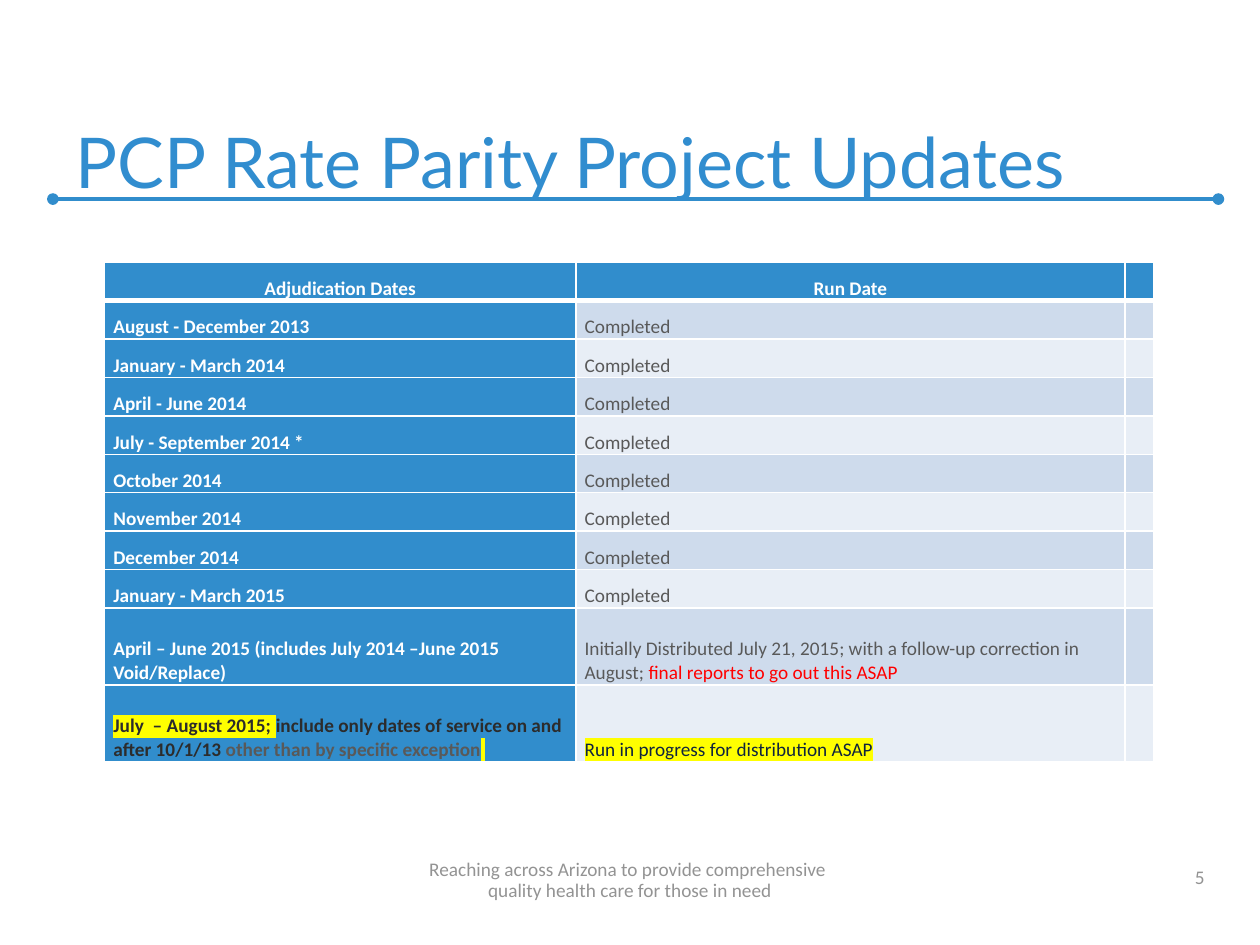
from typing import NamedTuple, Optional

from lxml.etree import SubElement
from pptx import Presentation
from pptx.dml.color import RGBColor
from pptx.enum.shapes import MSO_CONNECTOR as Connector
from pptx.enum.text import MSO_ANCHOR as Anchor, PP_ALIGN as Align
from pptx.oxml import parse_xml
from pptx.oxml.ns import nsdecls, qn
from pptx.util import Inches, Pt

COLORS = {
    "title": "318DCF",
    "accent": "318DCC",
    "band_dark": "CEDBEC",
    "band_light": "E8EEF6",
    "white": "FFFFFF",
    "gray": "595959",
    "footer": "939393",
    "ink": "2C2C2C",
    "navy": "0F243E",
    "red": "FF0000",
    "highlight": "FFFF00",
}
COLUMN_WIDTHS = (3.74, 4.36, 0.23)
ROW_UNIT = 3.97 / 13


class Piece(NamedTuple):
    text: str
    color: str = "gray"
    bold: bool = False
    highlighted: bool = False


class Label(NamedTuple):
    text: str
    left: float
    top: float
    width: float
    height: float
    size: int
    color: str
    font: str = "Calibri"
    align: Optional[Align] = None
    spacing: Optional[int] = None


class Period(NamedTuple):
    dates: list[Piece]
    status: list[Piece]
    units: int = 1


LABELS = [
    Label("PCP Rate Parity Project Updates", 0.5, 0.33, 9, 1.33, 40, "title", "Lato"),
    Label("5", 7.33, 6.78, 2.33, 0.32, 11, "footer", align=Align.RIGHT),
    Label(
        "Reaching across Arizona to provide comprehensive \nquality health care for those in need",
        0, 6.78, 10, 0.42, 11, "footer", align=Align.CENTER, spacing=12,
    ),
]
COMPLETED_DATES = [
    "August - December 2013",
    "January - March 2014",
    "April - June 2014",
    "July - September 2014 *",
    "October 2014",
    "November 2014",
    "December 2014",
    "January - March 2015",
]
PERIODS = [
    Period([Piece(dates, "white", True)], [Piece("Completed")]) for dates in COMPLETED_DATES
] + [
    Period(
        [Piece("April – June 2015 (includes July 2014 –June 2015 Void/Replace)", "white", True)],
        [
            Piece("Initially Distributed July 21, 2015; with a follow-up correction in August; "),
            Piece("final reports to go out this ASAP", "red"),
        ],
        2,
    ),
    Period(
        [
            Piece("July  – August 2015; ", "ink", True, True),
            Piece("include only dates of service on and after 10/1/13 ", "ink", True),
            Piece("other than by specific exception", "gray", True),
            Piece(" ", "navy", True, True),
        ],
        [Piece("Run in progress for distribution ASAP", "navy", highlighted=True)],
        2,
    ),
]


def rgb(color: str) -> RGBColor:
    """Look up a named colour."""
    return RGBColor.from_string(COLORS[color])


def style_run(run, size: int, color: str, font: str = "Calibri", bold: bool = False) -> None:
    """Set the font of a run."""
    run.font.size = Pt(size)
    run.font.name = font
    run.font.bold = bold
    run.font.color.rgb = rgb(color)


def draw_label(slide, label: Label) -> None:
    """Draw a bottom-anchored text box."""
    box = slide.shapes.add_textbox(
        Inches(label.left), Inches(label.top), Inches(label.width), Inches(label.height)
    )
    frame = box.text_frame
    frame.word_wrap = True
    frame.vertical_anchor = Anchor.BOTTOM
    paragraph = frame.paragraphs[0]
    paragraph.text = label.text
    paragraph.alignment = label.align
    if label.spacing:
        paragraph.line_spacing = Pt(label.spacing)
    for run in paragraph.runs:
        style_run(run, label.size, label.color, label.font)


def draw_title_rule(slide) -> None:
    """Draw the line under the title with a dot at each end."""
    rule = slide.shapes.add_connector(
        Connector.STRAIGHT, Inches(0.42), Inches(1.58), Inches(9.67), Inches(1.58)
    )
    rule.line.color.rgb = rgb("accent")
    rule.line.width = Pt(2.25)
    line = rule.line._get_or_add_ln()
    for end in ("a:headEnd", "a:tailEnd"):
        SubElement(line, qn(end), type="oval")
    SubElement(rule._element.spPr, qn("a:effectLst"))


def set_borders(cell, top: int, bottom: int) -> None:
    """Give a cell white borders, with the top and bottom widths in points."""
    properties = cell._tc.get_or_add_tcPr()
    widths = {"lnL": 1, "lnR": 1, "lnT": top, "lnB": bottom}
    for index, (side, width) in enumerate(widths.items()):
        border = parse_xml(
            f'<a:{side} {nsdecls("a")} w="{Pt(width)}"><a:solidFill>'
            f'<a:srgbClr val="{COLORS["white"]}"/></a:solidFill></a:{side}>'
        )
        properties.insert(index, border)


def fill_cell(cell, pieces: list[Piece], fill: str, align: Optional[Align] = None) -> None:
    """Fill a cell with colour and formatted text."""
    cell.fill.solid()
    cell.fill.fore_color.rgb = rgb(fill)
    cell.vertical_anchor = Anchor.BOTTOM
    cell.margin_left = cell.margin_right = Inches(0.07)
    cell.margin_top = cell.margin_bottom = 0
    paragraph = cell.text_frame.paragraphs[0]
    paragraph.alignment = align
    for piece in pieces:
        run = paragraph.add_run()
        run.text = piece.text
        style_run(run, 11, piece.color, bold=piece.bold)
        if piece.highlighted:
            highlight = parse_xml(
                f'<a:highlight {nsdecls("a")}><a:srgbClr val="{COLORS["highlight"]}"/></a:highlight>'
            )
            run.font._element.find(qn("a:solidFill")).addnext(highlight)


def draw_schedule(slide) -> None:
    """Draw the table of adjudication dates and run dates."""
    schedule = slide.shapes.add_table(
        len(PERIODS) + 1, len(COLUMN_WIDTHS), Inches(0.83), Inches(2.08), Inches(8.33), Inches(3.97)
    ).table
    for column, width in zip(schedule.columns, COLUMN_WIDTHS):
        column.width = Inches(width)
    for row, units in zip(schedule.rows, [1] + [period.units for period in PERIODS]):
        row.height = Inches(ROW_UNIT * units)

    headings = [[Piece("Adjudication Dates", "white", True)], [Piece("Run Date", "white", True)], []]
    for cell, heading in zip(schedule.rows[0].cells, headings):
        fill_cell(cell, heading, "accent", Align.CENTER)
        set_borders(cell, 1, 3)
    for index, period in enumerate(PERIODS):
        band = "band_light" if index % 2 else "band_dark"
        contents = [(period.dates, "accent"), (period.status, band), ([], band)]
        for cell, (pieces, fill) in zip(schedule.rows[index + 1].cells, contents):
            fill_cell(cell, pieces, fill)
            set_borders(cell, 1 if index else 3, 1)


def main() -> None:
    """Build and save the slide."""
    deck = Presentation()
    deck.slide_width, deck.slide_height = Inches(10), Inches(7.5)
    slide = deck.slides.add_slide(deck.slide_layouts[6])
    draw_title_rule(slide)
    for label in LABELS:
        draw_label(slide, label)
    draw_schedule(slide)
    deck.save("out.pptx")


if __name__ == "__main__":
    main()
